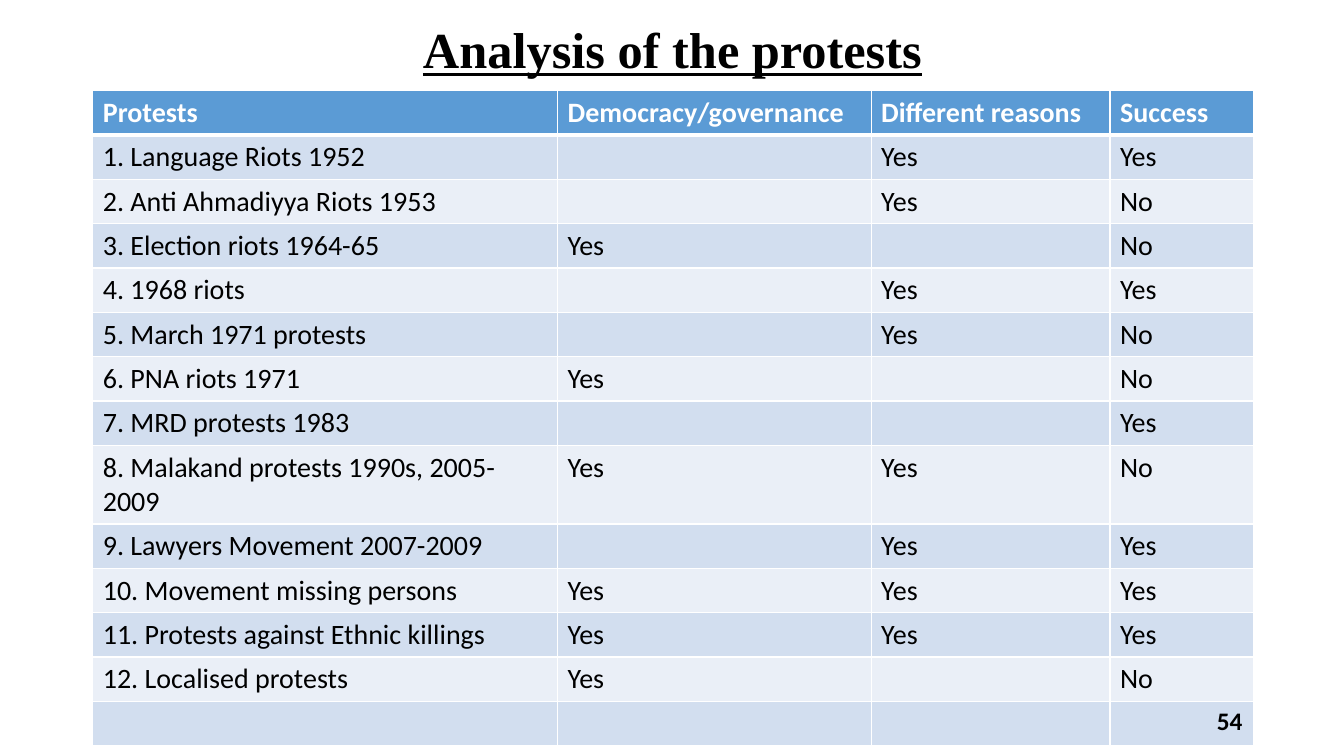
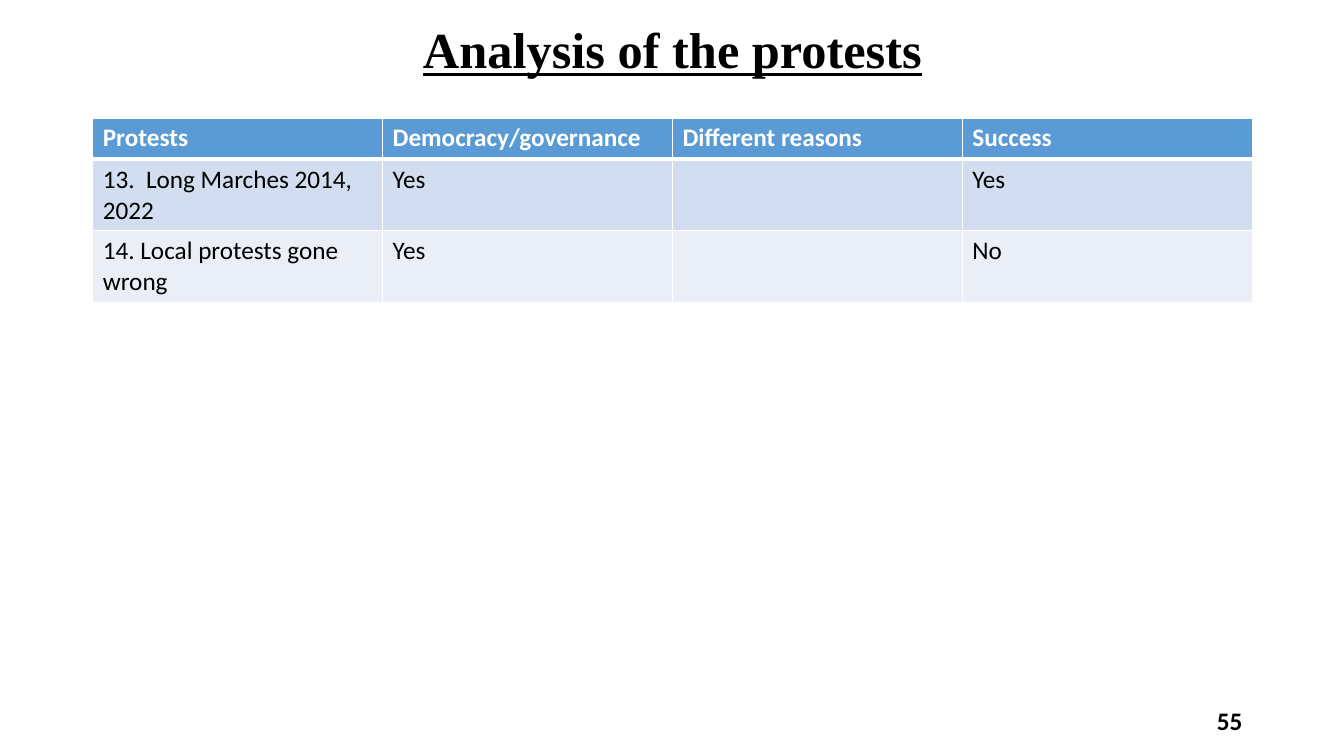
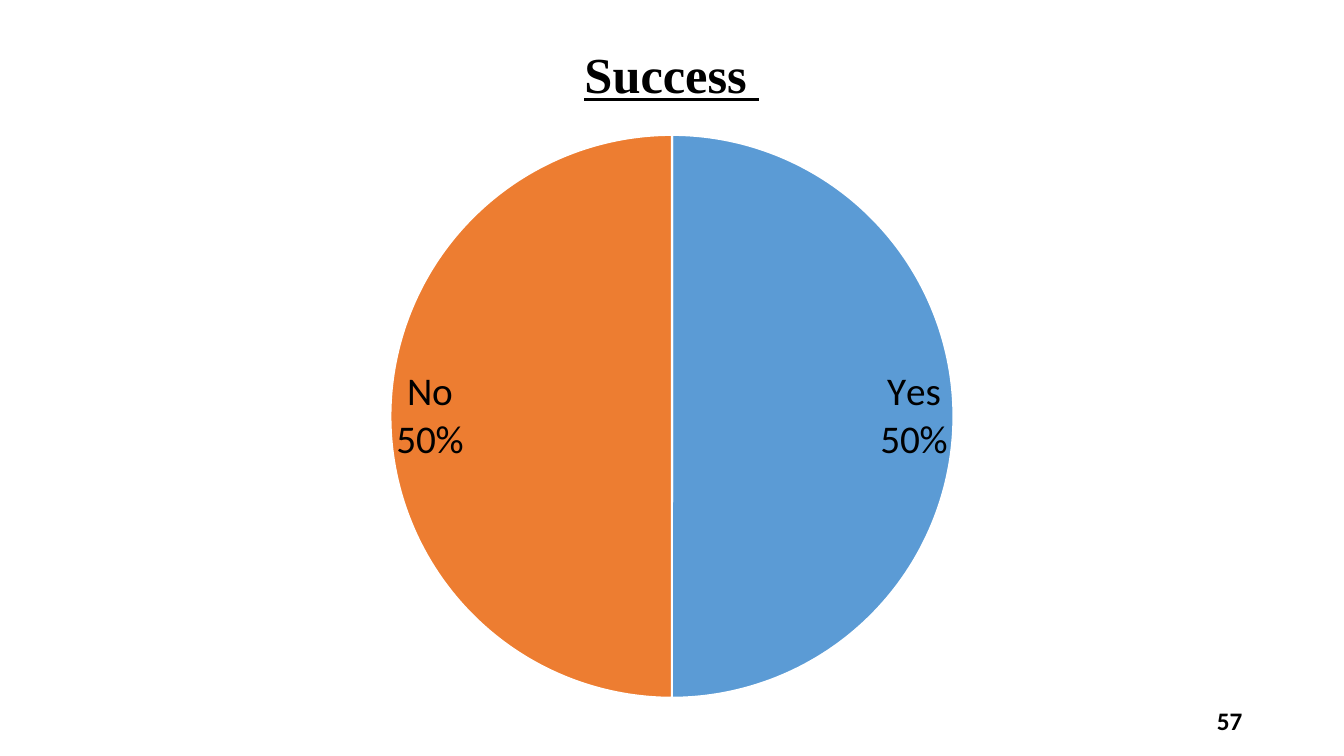
from pptx import Presentation
from pptx.util import Inches, Pt
from pptx.dml.color import RGBColor
from pptx.chart.data import CategoryChartData as Data
from pptx.enum.chart import XL_CHART_TYPE as Kind, XL_LABEL_POSITION as Spot
from pptx.enum.text import PP_ALIGN as Align, MSO_ANCHOR as Anchor
from pptx.oxml import parse_xml
from pptx.oxml.ns import nsdecls
from lxml.etree import SubElement

BLACK = RGBColor(0, 0, 0)
WHITE = RGBColor(255, 255, 255)
BLUE = RGBColor(0x5B, 0x9B, 0xD5)
ORANGE = RGBColor(0xED, 0x7D, 0x31)
BANDS = [RGBColor(0xD2, 0xDE, 0xEF), RGBColor(0xEA, 0xEF, 0xF7)]
SANS, SERIF = "Calibri", "Times New Roman"
HEADS = ["Protests", "Democracy/governance", "Different reasons", "Success"]
LEFT, WIDE = 0.92, 11.5

EARLY = [
    ["1. Language Riots 1952", "", "Yes", "Yes"],
    ["2. Anti Ahmadiyya Riots 1953", "", "Yes", "No"],
    ["3. Election riots 1964-65", "Yes", "", "No"],
    ["4. 1968 riots", "", "Yes", "Yes"],
    ["5. March 1971 protests", "", "Yes", "No"],
    ["6. PNA riots 1971", "Yes", "", "No"],
    ["7. MRD protests 1983", "", "", "Yes"],
    ["8. Malakand protests 1990s, 2005-2009", "Yes", "Yes", "No"],
    ["9. Lawyers Movement 2007-2009", "", "Yes", "Yes"],
    ["10. Movement missing persons", "Yes", "Yes", "Yes"],
    ["11. Protests against Ethnic killings", "Yes", "Yes", "Yes"],
    ["12. Localised protests", "Yes", "", "No"],
    ["", "", "", ""],
]
LATE = [
    ["13.  Long Marches 2014, 2022", "Yes", "", "Yes"],
    ["14. Local protests gone wrong", "Yes", "", "No"],
]


def style(font, size, face=SANS, color=BLACK, bold=False, line=False):
    font.size, font.name = Pt(size), face
    font.bold, font.underline = bold, line
    font.color.rgb = color


def write(frame, text, align=Align.LEFT, space=1.0, **look):
    para = frame.paragraphs[0]
    para.alignment, para.line_spacing = align, space
    if text:
        run = para.add_run()
        run.text = text
        style(run.font, **look)


def label(slide, box, text, **look):
    frame = slide.shapes.add_textbox(*map(Inches, box)).text_frame
    frame.word_wrap = True
    frame.vertical_anchor = Anchor.MIDDLE
    write(frame, text, **look)


def title(slide, text):
    label(slide, (LEFT, 0.22, WIDE, 0.6), text, align=Align.CENTER,
          space=0.9, size=36, face=SERIF, bold=True, line=True)


def number(slide, page):
    label(slide, (9.42, 6.95, 3, 0.4), str(page), align=Align.RIGHT,
          size=18, bold=True)


def border(cell, **widths):
    props = cell._tc.get_or_add_tcPr()
    for side in "LRTB":
        width = Pt(widths.get(side, 1))
        props.append(parse_xml(
            f'<a:ln{side} {nsdecls("a")} w="{width}"><a:solidFill>'
            f'<a:srgbClr val="{WHITE}"/></a:solidFill></a:ln{side}>'))


def grid(slide, top, cols, highs, rows, size):
    rows = [HEADS] + rows
    box = (LEFT, top, sum(cols), sum(highs))
    table = slide.shapes.add_table(
        len(rows), len(cols), *map(Inches, box)).table
    for col, width in zip(table.columns, cols):
        col.width = Inches(width)
    for r, (row, high) in enumerate(zip(rows, highs)):
        table.rows[r].height = Inches(high)
        head = r == 0
        for c, text in enumerate(row):
            cell = table.cell(r, c)
            border(cell, B=3 if head else 1, T=3 if r == 1 else 1)
            cell.fill.solid()
            cell.fill.fore_color.rgb = BLUE if head else BANDS[(r - 1) % 2]
            write(cell.text_frame, text, size=size, bold=head,
                  color=WHITE if head else BLACK)


def pie(slide, box, name, shares):
    data = Data()
    data.categories = list(shares)
    data.add_series(name, list(shares.values()))
    chart = slide.shapes.add_chart(
        Kind.PIE, *map(Inches, box), data).chart
    style(chart.font, 28)
    chart.has_legend = False
    chart.has_title = True
    write(chart.chart_title.text_frame, name, align=Align.CENTER,
          size=36, face=SERIF, bold=True, line=True)
    plot = chart.plots[0]
    plot.vary_by_categories = True
    for i, color in enumerate((BLUE, ORANGE)):
        part = plot.series[0].points[i].format
        part.fill.solid()
        part.fill.fore_color.rgb = color
        part.line.color.rgb = WHITE
        part.line.width = Pt(1.5)
    plot.has_data_labels = True
    tags = plot.data_labels
    style(tags.font, 28)
    tags.show_value = False
    tags.show_percentage = tags.show_category_name = True
    tags.number_format, tags.number_format_is_linked = "0%", False
    tags.position = Spot.INSIDE_END
    mark = parse_xml(f'<c:separator {nsdecls("c")}>\n</c:separator>')
    tags._element.find("{*}showBubbleSize").addnext(mark)
    area = chart._chartSpace.chart.plotArea
    for old in area.findall("{*}layout"):
        area.remove(old)
    place = parse_xml(f'<c:layout {nsdecls("c")}><c:manualLayout/></c:layout>')
    space = area.tag.split("}")[0] + "}"
    rules = dict(layoutTarget="inner", xMode="edge", yMode="edge",
                 x=0.21, y=0.17, w=0.58, h=0.81)
    for key, value in rules.items():
        SubElement(place[0], space + key).set("val", str(value))
    area.insert(0, place)


def main():
    deck = Presentation()
    deck.slide_width, deck.slide_height = Inches(13.33), Inches(7.5)

    def page(num, draw):
        slide = deck.slides.add_slide(deck.slide_layouts[6])
        draw(slide)
        number(slide, num)

    def early(slide):
        title(slide, "Analysis of the protests")
        highs = [0.44] * 8 + [0.78] + [0.44] * 5
        grid(slide, 0.9, [4.61, 3.11, 2.37, 1.42], highs, EARLY, 20)

    def late(slide):
        title(slide, "Analysis of the protests")
        grid(slide, 1.17, [WIDE / 4] * 4, [0.41, 0.71, 0.71], LATE, 18)

    def result(slide):
        pie(slide, (1.85, 0.14, 9.63, 6.94), "Success ",
            {"Yes": 50, "No": 50})

    page(54, early)
    page(55, late)
    page(57, result)
    deck.save("out.pptx")


if __name__ == "__main__":
    main()
